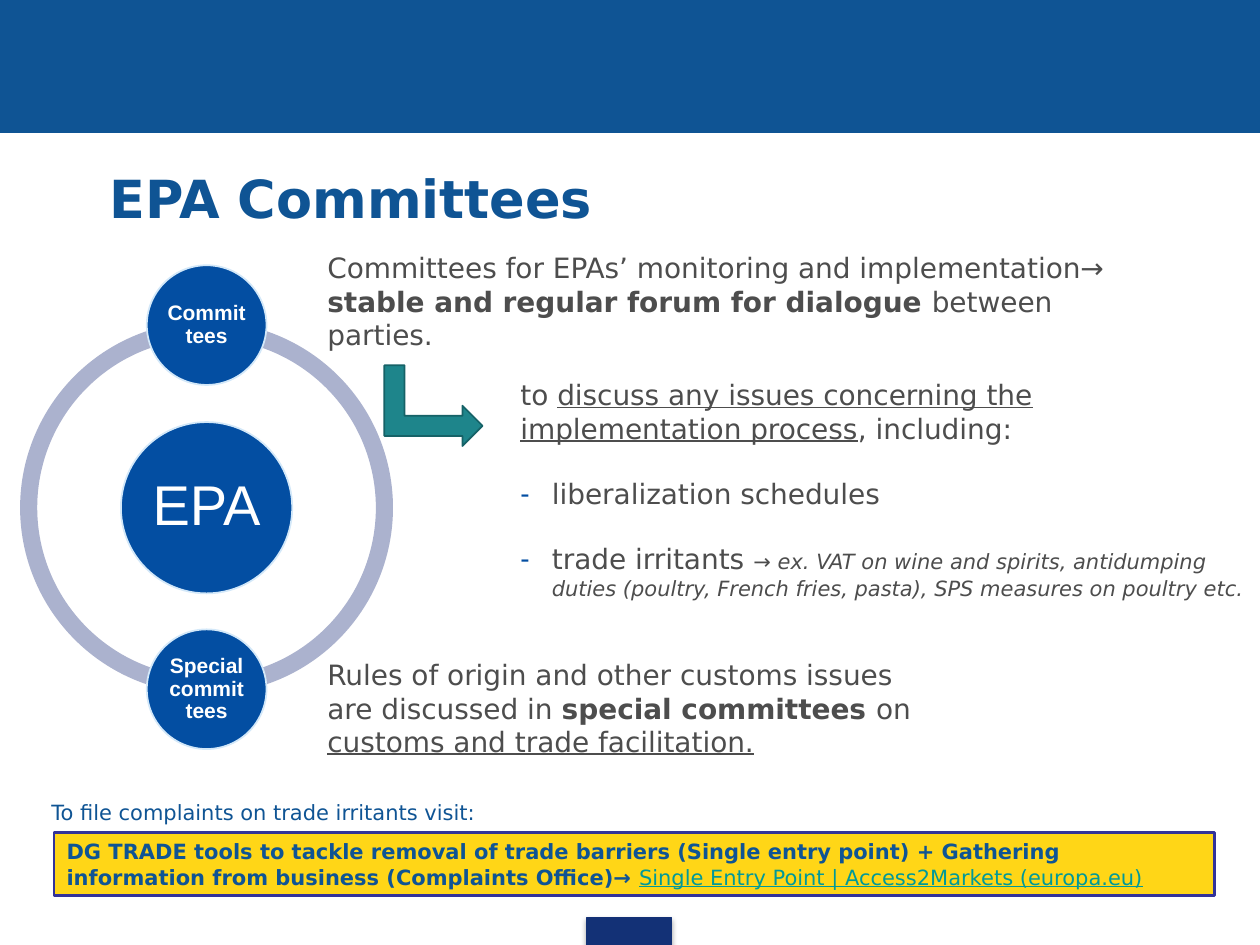
from lxml import etree
from pptx import Presentation
from pptx.dml.color import RGBColor
from pptx.enum.shapes import MSO_SHAPE
from pptx.enum.text import MSO_ANCHOR, MSO_AUTO_SIZE, PP_ALIGN
from pptx.oxml import parse_xml
from pptx.oxml.ns import qn
from pptx.util import Inches, Pt

RECT, OVAL, ARC = MSO_SHAPE.RECTANGLE, MSO_SHAPE.OVAL, MSO_SHAPE.BLOCK_ARC
BENT_ARROW = MSO_SHAPE.BENT_UP_ARROW
LEFT, CENTER = PP_ALIGN.LEFT, PP_ALIGN.CENTER
TOP, MIDDLE = MSO_ANCHOR.TOP, MSO_ANCHOR.MIDDLE

SANS = "DejaVu Sans"
BLUE, CIRCLE_BLUE, GREY, WHITE = "0F5494", "034EA2", "4D4D4D", "FFFFFF"

# Each paragraph is a list of runs: (text, changes to the base format)
TITLE = [[("EPA Committees", {})]]
FORUM = [[
    ("Committees for EPAs’ monitoring and implementation→ ", {}),
    ("stable and regular forum for dialogue ", {"bold": True}),
    ("between parties.", {}),
]]
ISSUES = [
    [("to ", {}),
     ("discuss any issues concerning the implementation process", {"underline": True}),
     (", including:", {})],
    [("liberalization schedules", {})],
    [("trade irritants ", {}),
     ("→ ", {"size": 12}),
     ("ex. VAT on wine and spirits, antidumping duties (poultry, French fries, pasta), "
      "SPS measures on poultry etc.", {"size": 12, "italic": True})],
]
CUSTOMS = [[
    ("Rules of origin and other customs issues are discussed in ", {}),
    ("special committees ", {"bold": True}),
    ("on ", {}),
    ("customs and trade facilitation.", {"underline": True}),
]]
COMPLAINTS = [[("To file complaints on trade irritants visit:", {})]]
TOOLS = [[
    ("DG TRADE tools to tackle removal of trade barriers (Single entry point) + Gathering "
     "information from business (Complaints Office)→ ", {"bold": True}),
    ("Single Entry Point | Access2Markets (europa.eu)",
     {"color": "009999", "underline": True}),
]]

# Ring: centre, diameter, and circles as (text, centre y, diameter, size, bold, inset)
RING_X, RING_Y, RING_SIZE = 1.64, 4.03, 2.96
CIRCLES = [
    ("EPA", RING_Y, 1.36, 32, False, 0.04),
    ("Committees", RING_Y - 1.45, 0.95, 12, True, 0.02),
    ("Special committees", RING_Y + 1.44, 0.95, 12, True, 0.02),
]

SHADOW = (
    '<a:effectLst xmlns:a="http://schemas.openxmlformats.org/drawingml/2006/main">'
    '<a:outerShdw blurRad="40000" dist="23000" dir="5400000" rotWithShape="0">'
    '<a:srgbClr val="000000"><a:alpha val="35000"/></a:srgbClr>'
    '</a:outerShdw></a:effectLst>'
)


def rgb(color):
    return RGBColor.from_string(color)


def place(box, left, top, width, height):
    box.left, box.top = Inches(left), Inches(top)
    box.width, box.height = Inches(width), Inches(height)


def add_shape(page, kind, area, fill, line=None, line_width=1):
    shape = page.shapes.add_shape(kind, *map(Inches, area))
    shape.shadow.inherit = False
    shape.fill.solid()
    shape.fill.fore_color.rgb = rgb(fill)
    if line:
        shape.line.color.rgb = rgb(line)
        shape.line.width = Pt(line_width)
    else:
        shape.line.fill.background()
    return shape


def write(box, paragraphs, size, color, font=SANS, bold=False, align=LEFT,
          anchor=TOP, after=0, spacing=1.0):
    frame = box.text_frame
    frame.word_wrap = True
    frame.auto_size = MSO_AUTO_SIZE.NONE
    frame.vertical_anchor = anchor
    for index, runs in enumerate(paragraphs):
        para = frame.paragraphs[0] if index == 0 else frame.add_paragraph()
        para.alignment = align
        para.space_before, para.space_after = Pt(0), Pt(after)
        para.line_spacing = spacing
        for text, changes in runs:
            span = para.add_run()
            span.text = text
            span.font.name = font
            span.font.size = Pt(changes.get("size", size))
            span.font.bold = changes.get("bold", bold)
            span.font.italic = changes.get("italic", False)
            span.font.underline = changes.get("underline", False)
            span.font.color.rgb = rgb(changes.get("color", color))
    return frame


def indent(para, margin, first=0, bullet=None):
    """Set the left margin and first-line indent, with or without a bullet."""
    props = para._p.get_or_add_pPr()
    props.set("marL", str(Inches(margin)))
    props.set("indent", str(Inches(first)))
    if bullet:
        bullet_color = etree.SubElement(props, qn("a:buClr"))
        etree.SubElement(bullet_color, qn("a:srgbClr"), val=CIRCLE_BLUE)
        etree.SubElement(props, qn("a:buChar"), char=bullet)
    else:
        etree.SubElement(props, qn("a:buNone"))


def add_text(page, area, paragraphs, size, color, **options):
    box = page.shapes.add_textbox(*map(Inches, area))
    return write(box, paragraphs, size, color, **options)


def add_ring(page):
    corner = (RING_X - RING_SIZE / 2, RING_Y - RING_SIZE / 2, RING_SIZE, RING_SIZE)
    for start, end in ((54, 162), (162, 54)):
        arc = add_shape(page, ARC, corner, "ABB2CE")
        for index, value in enumerate((start, end, 0.046)):
            arc.adjustments[index] = value
    for text, middle, across, size, bold, inset in CIRCLES:
        area = (RING_X - across / 2, middle - across / 2, across, across)
        circle = add_shape(page, OVAL, area, CIRCLE_BLUE, "D3E8F9")
        frame = write(circle, [[(text, {})]], size, WHITE, font="Arial", bold=bold,
                      align=CENTER, anchor=MIDDLE, spacing=0.9)
        frame.margin_left = frame.margin_right = Inches(inset)
        frame.margin_top = frame.margin_bottom = Inches(inset)


def main():
    deck = Presentation()
    deck.slide_width, deck.slide_height = Inches(10), Inches(7.5)
    page = deck.slides.add_slide(deck.slide_layouts[1])
    title, body = page.placeholders

    add_shape(page, RECT, (0, 0, 10, 1.05), BLUE, BLUE, 0.75)
    footer = add_shape(page, RECT, (4.66, 7.28, 0.67, 0.22), "133176", "133176", 0.75)
    properties = footer._element.spPr
    properties.replace(properties.find(qn("a:effectLst")), parse_xml(SHADOW))

    place(title, 0.38, 1.06, 9, 1.02)
    frame = write(title, TITLE, 30, BLUE, bold=True, anchor=MIDDLE)
    indent(frame.paragraphs[0], 0.39)

    add_ring(page)

    add_text(page, (2.5, 1.94, 6.5, 0.46), FORUM, 16, GREY, after=18)
    place(body, 4.03, 2.95, 5.97, 2.1)
    lead, *items = write(body, ISSUES, 16, GREY, after=18).paragraphs
    indent(lead, 0)
    for item in items:
        indent(item, 0.25, -0.25, "-")
    add_text(page, (2.5, 5.17, 5.06, 1.03), CUSTOMS, 16, GREY, after=18)

    tools = add_shape(page, RECT, (0.43, 6.61, 9.21, 0.5), "FFD617", "333399", 1.5)
    write(tools, TOOLS, 12, BLUE)
    arrow = add_shape(page, BENT_ARROW, (3.12, 2.83, 0.64, 0.78), "1E858B", "166267")
    arrow.rotation = 90
    frame = add_text(page, (0.25, 6.3, 6.49, 0.29), COMPLAINTS, 12, BLUE)
    indent(frame.paragraphs[0], 0.06)

    deck.save("out.pptx")


if __name__ == "__main__":
    main()
